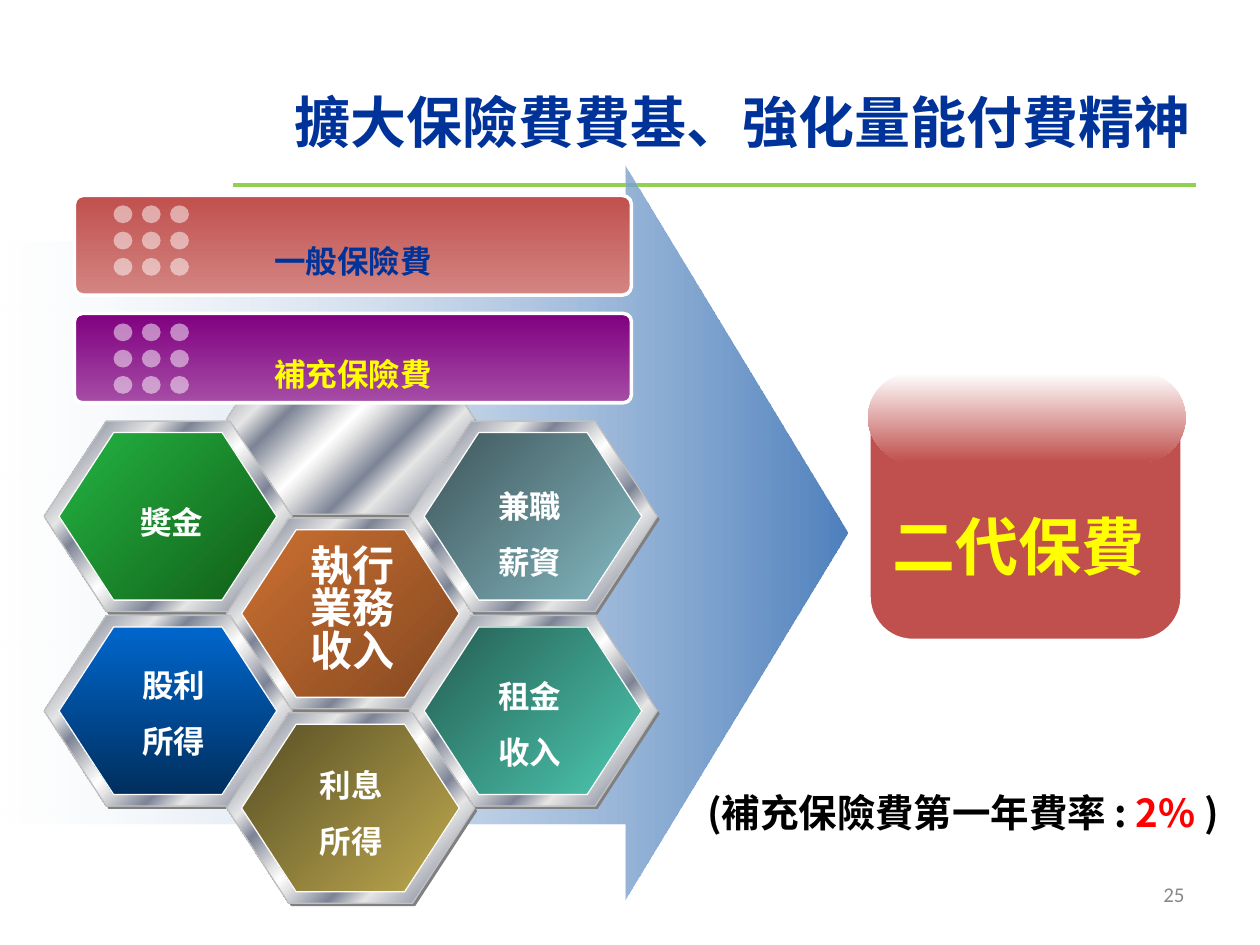
from lxml import etree
from pptx import Presentation
from pptx import util as u
from pptx.dml import color
from pptx.enum import shapes, text
from pptx.oxml import ns

Cm = u.Cm
KIND = shapes.MSO_SHAPE
ALIGN = text.PP_ALIGN
ANCHOR = text.MSO_ANCHOR
SC, TC = "Noto Sans CJK SC", "Noto Sans CJK TC"
STEEL = [(0, "E6E6E6"), (8, "7D8496"), (26, "E6E6E6"), (34, "7D8496"),
         (46, "E6E6E6"), (50, "FFFFFF"), (54, "E6E6E6"), (66, "7D8496"),
         (74, "E6E6E6"), (92, "7D8496"), (100, "E6E6E6")]
CELL_W, CELL_H = 5, 3.84
COLUMN_STEP, ROW_STEP = 3.68, 1.96


def rgb(value):
    return color.RGBColor.from_string(value)


def add_alpha(parent, percent):
    etree.SubElement(parent, ns.qn("a:alpha")).set("val", str(percent * 1000))


def gradient(shape, stops, angle):
    shape.fill.gradient()
    shape.fill.gradient_angle = -angle % 360
    stop_list = shape._element.spPr.find(".//" + ns.qn("a:gsLst"))
    for old in list(stop_list):
        stop_list.remove(old)
    for position, value, *alpha in stops:
        stop = etree.SubElement(stop_list, ns.qn("a:gs"))
        stop.set("pos", str(position * 1000))
        shade = etree.SubElement(stop, ns.qn("a:srgbClr"))
        shade.set("val", value)
        if alpha:
            add_alpha(shade, alpha[0])


def add_shape(slide, kind, box, fill, angle=0, line=None, adjust=()):
    shape = slide.shapes.add_shape(kind, *map(Cm, box))
    shape.shadow.inherit = False
    for index, value in enumerate(adjust):
        shape.adjustments[index] = value
    if isinstance(fill, str):
        shape.fill.solid()
        shape.fill.fore_color.rgb = rgb(fill)
    else:
        gradient(shape, fill, angle)
    if line:
        shape.line.color.rgb = rgb(line[0])
        shape.line.width = u.Pt(line[1])
    else:
        shape.line.fill.background()
    return shape


def write(shape, lines, size, align=ALIGN.CENTER, spacing=None,
          anchor=ANCHOR.TOP, bold=True):
    frame = shape.text_frame
    frame.word_wrap = True
    frame.vertical_anchor = anchor
    for index, runs in enumerate(lines):
        paragraph = frame.add_paragraph() if index else frame.paragraphs[0]
        paragraph.alignment = align
        if spacing:
            paragraph.line_spacing = spacing
        for wording, latin, asian, value in runs:
            run = paragraph.add_run()
            run.text = wording
            run.font.size = u.Pt(size)
            run.font.bold = bold
            run.font.name = latin
            run.font.color.rgb = rgb(value)
            east = etree.SubElement(run._r.get_or_add_rPr(), ns.qn("a:ea"))
            east.set("typeface", asian)


def add_text(slide, box, lines, size, **style):
    write(slide.shapes.add_textbox(*map(Cm, box)), lines, size, **style)


def heading(slide, box):
    left, top, width, height = box
    rule = slide.shapes.add_connector(
        shapes.MSO_CONNECTOR.STRAIGHT, Cm(left - 0.99), Cm(top + 2.99),
        Cm(left + 18.41), Cm(top + 2.99))
    rule.line.color.rgb = rgb("92D050")
    rule.line.width = u.Pt(2.25)
    etree.SubElement(rule._element.spPr, ns.qn("a:effectLst"))
    add_text(slide, box, [[("擴大保險費費基、強化量能付費精神", SC, SC, "003399")]],
             32, align=ALIGN.LEFT, anchor=ANCHOR.MIDDLE)


def flow_arrow(slide, box):
    add_shape(slide, KIND.RIGHT_ARROW, box,
              [(0, "FFFFFF", 24), (100, "4F81BD")], adjust=(0.793, 0.303))


def fee_bar(slide, box, name, name_color, start, end):
    left, top, width, height = box
    bar = add_shape(slide, KIND.ROUNDED_RECTANGLE, box,
                    [(0, start), (100, end)], 90, ("FFFFFF", 2), (0.091,))
    write(bar, [[(name, "Arial", TC, name_color)]], 18,
          spacing=u.Pt(40), anchor=ANCHOR.MIDDLE)
    for row in range(3):
        for column in range(3):
            dot = add_shape(slide, KIND.OVAL,
                            (left + 0.79 + 0.57 * column,
                             top + 0.2 + 0.53 * row, 0.38, 0.36), "FFFFFF")
            add_alpha(dot._element.spPr.find(".//" + ns.qn("a:srgbClr")), 50)


def premium_block(slide, box):
    left, top, width, height = box
    add_shape(slide, KIND.ROUNDED_RECTANGLE, box, "C0504D",
              line=("FFFFFF", 3), adjust=(0.167,))
    add_shape(slide, KIND.ROUNDED_RECTANGLE, (left, top, width + 0.05, 1.8),
              [(0, "FFFFFF"), (100, "C0504D")], 90, adjust=(0.5,))
    add_text(slide, (left, top + 1.22, width - 0.28, 2.74),
             [[("二代保費", "Arial", TC, "FFFF00")]], 36, spacing=1.9)


def steel_rim(slide, left, top):
    add_shape(slide, KIND.HEXAGON, (left + 0.05, top + 0.06, CELL_W, CELL_H),
              "808080", adjust=(0.326,))
    add_shape(slide, KIND.HEXAGON, (left, top, CELL_W, CELL_H), STEEL, 45,
              ("C0C0C0", 0.75), (0.326,))


def income_cell(slide, left, top, names, start, end, angle, label, size, pitch):
    steel_rim(slide, left, top)
    add_shape(slide, KIND.HEXAGON, (left + 0.3, top + 0.23, 4.39, 3.38),
              [(0, start), (100, end)], angle, ("FFFFFF", 0.75), (0.326,))
    dx, dy, width, height = label
    add_text(slide, (left + dx, top + dy, width, height),
             [[(name, "Arial", TC, "FFFFFF")] for name in names],
             size, spacing=u.Pt(pitch))


def honeycomb(slide, left, top):
    cells = [
        (0, 1, ["奬金"], "24B443", "115D16", 45, (0.81, 1.65, 3.53, 1.19), 18, 18),
        (1, 2, ["執行", "業務", "收入"], "CC7032", "844820", 45,
         (1.42, 0.48, 2.24, 2.82), 24, 24),
        (2, 1, ["兼職", "薪資"], "3E565A", "85B9C3", 45,
         (1.04, 0.84, 2.79, 2.54), 18, 32),
        (2, 3, ["租金", "收入"], "245D52", "4DC9B1", 45,
         (1.04, 0.74, 2.79, 2.54), 18, 32),
        (0, 3, ["股利", "所得"], "0066CC", "002F5E", 90,
         (1.22, 0.53, 2.79, 2.54), 18, 32),
        (1, 4, ["利息", "所得"], "584F25", "BFAA4F", 45,
         (1.12, 0.58, 2.79, 2.54), 18, 32),
    ]
    steel_rim(slide, left + COLUMN_STEP, top)
    for column, row, *content in cells:
        income_cell(slide, left + column * COLUMN_STEP, top + row * ROW_STEP,
                    *content)


def rate_note(slide, box):
    add_text(slide, box, [[("(", SC, SC, "000000"),
                           ("補充保險費第一年費率 ", TC, TC, "000000"),
                           (": ", SC, SC, "000000"),
                           ("2% ", SC, SC, "FF0000"),
                           (")", SC, SC, "000000")]], 22, spacing=1.9)


def page_number(slide, box):
    add_text(slide, box, [[("25", "Calibri", TC, "898989")]], 12,
             align=ALIGN.RIGHT, bold=False)


def main():
    deck = Presentation()
    deck.slide_width, deck.slide_height = Cm(25.4), Cm(19.05)
    slide = deck.slides.add_slide(deck.slide_layouts[6])
    heading(slide, (5.69, 0.74, 18.8, 3.4))
    flow_arrow(slide, (0, 3.33, 17.09, 14.81))
    fee_bar(slide, (1.5, 3.94, 11.23, 2.01), "一般保險費", "003399",
            "C0504D", "D38583")
    premium_block(slide, (17.5, 7.52, 6.35, 5.41))
    honeycomb(slide, 0.89, 6.53)
    fee_bar(slide, (1.5, 6.32, 11.23, 1.8), "補充保險費", "FFFF00",
            "800080", "A64DA6")
    rate_note(slide, (13.94, 14.94, 10.95, 2.03))
    page_number(slide, (18.21, 17.65, 5.92, 1.02))
    deck.save("out.pptx")


if __name__ == "__main__":
    main()
